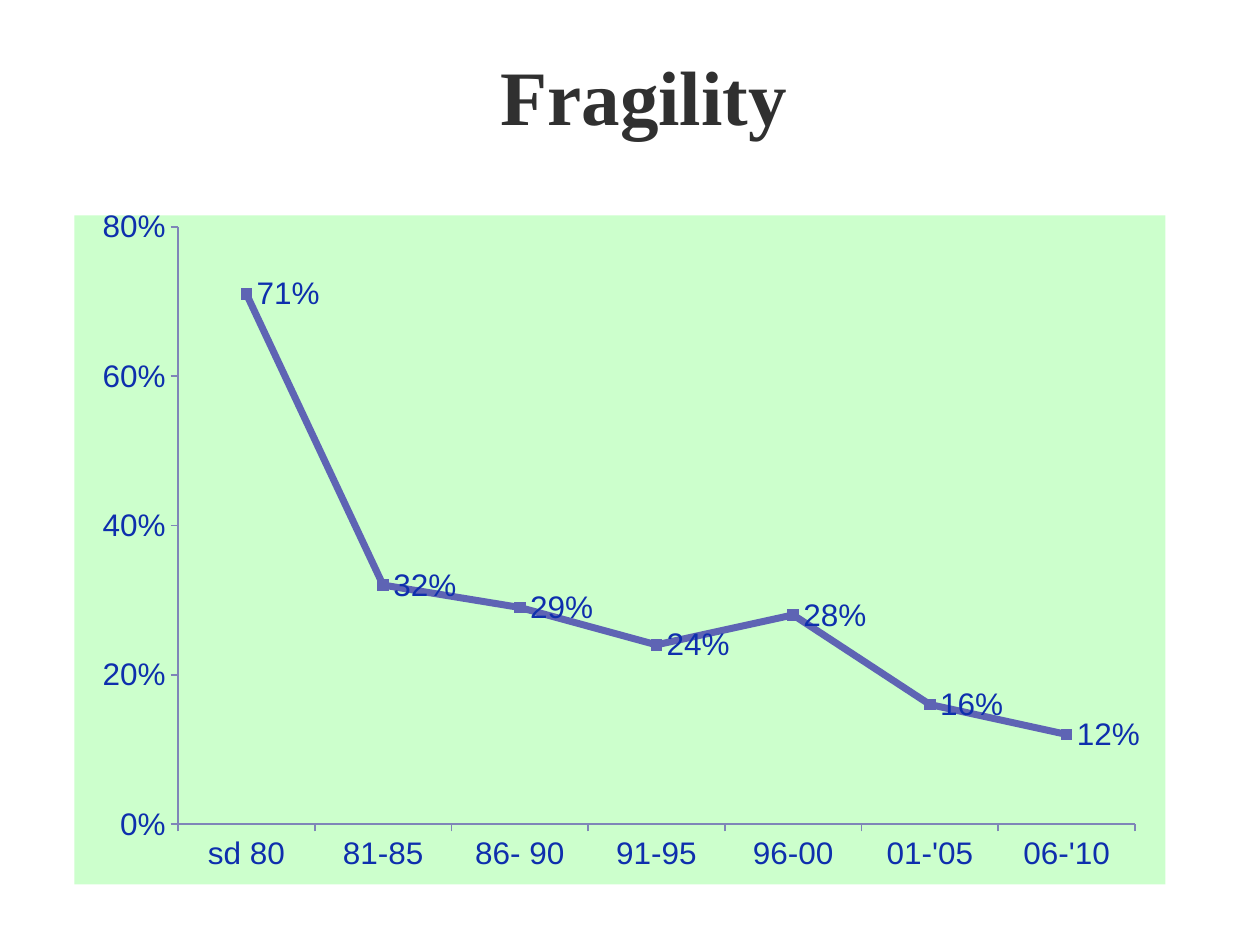
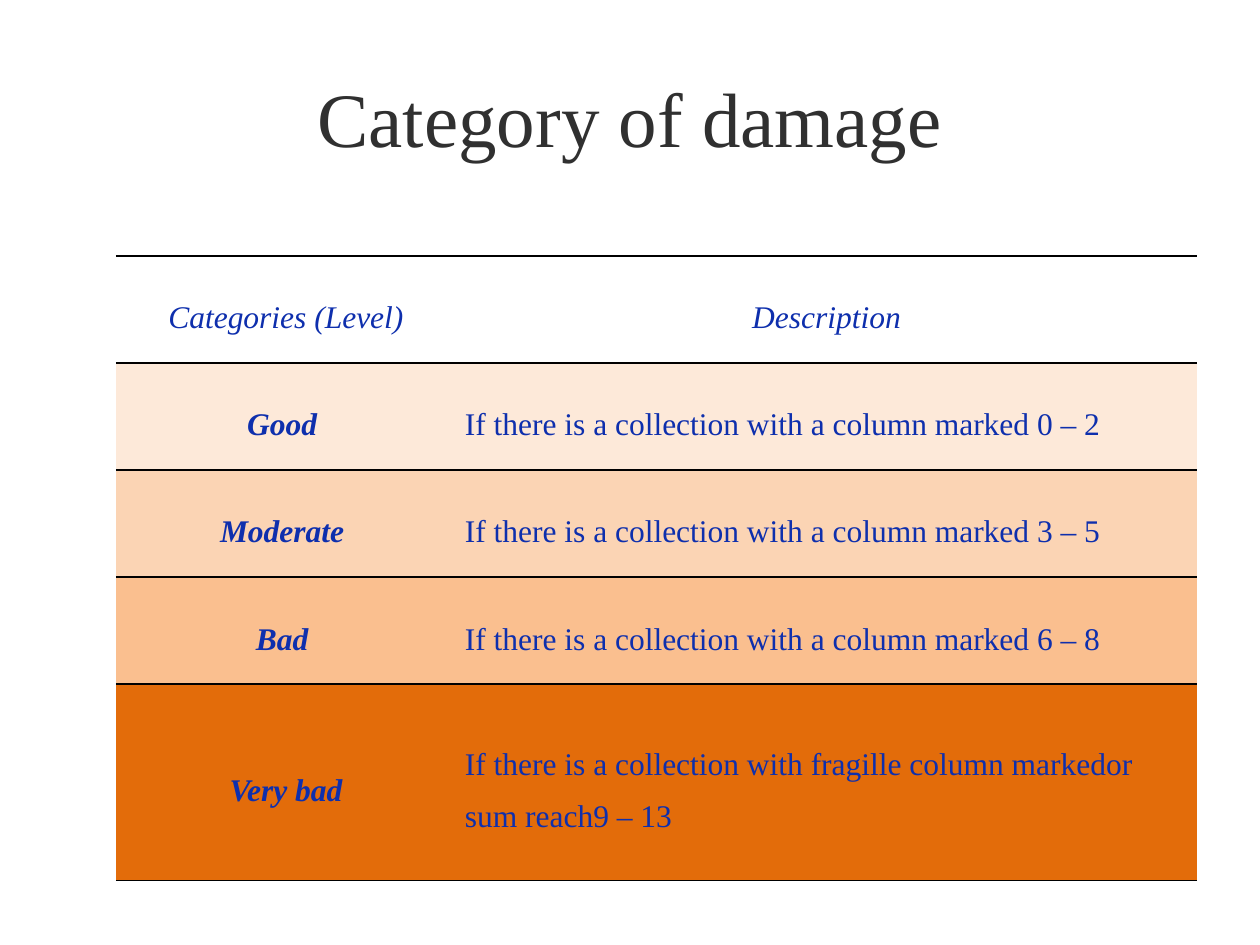
"""Build two slides on collection condition: a fragility chart and a damage category table."""
from dataclasses import dataclass

from lxml import etree
from pptx import Presentation
from pptx.chart.data import CategoryChartData
from pptx.dml.color import RGBColor
from pptx.enum.chart import XL_CHART_TYPE as ChartType
from pptx.enum.chart import XL_LABEL_POSITION as LabelPosition
from pptx.enum.chart import XL_MARKER_STYLE as MarkerStyle
from pptx.enum.chart import XL_TICK_MARK as TickMark
from pptx.enum.text import MSO_ANCHOR as Anchor
from pptx.enum.text import MSO_AUTO_SIZE as AutoSize
from pptx.enum.text import PP_ALIGN as Align
from pptx.oxml import parse_xml
from pptx.oxml.ns import nsdecls, qn
from pptx.util import Inches, Pt


@dataclass(frozen=True)
class Theme:
    heading: str = "303030"
    ink: str = "0E2FAD"
    chart_ground: str = "CCFFCC"
    trend: str = "5E64B4"
    axis: str = "7F85B8"
    rule: str = "000000"
    levels: tuple = ("FFFFFF", "FDE9D9", "FBD4B4", "FABF8F", "E36C0A")
    serif: str = "Times New Roman"
    sans: str = "Arial"
    title_size: int = 44
    body_size: int = 18


def rgb(color):
    return RGBColor.from_string(color)


class Deck:
    def __init__(self, theme):
        self.theme = theme
        self.presentation = Presentation()
        self.presentation.slide_width = Inches(10)
        self.presentation.slide_height = Inches(7.5)
        self.slide = None

    def style(self, font, color, size, name, bold=False, italic=False):
        font.name, font.size = name, Pt(size)
        font.bold, font.italic = bold, italic
        font.color.rgb = rgb(color)

    def start(self, title, box, bold=False):
        self.slide = self.presentation.slides.add_slide(self.presentation.slide_layouts[5])
        heading = self.slide.shapes.title
        heading.left, heading.top, heading.width, heading.height = map(Inches, box)
        frame = heading.text_frame
        frame.text = title
        frame.word_wrap = True
        frame.auto_size = AutoSize.NONE
        frame.vertical_anchor = Anchor.MIDDLE
        paragraph = frame.paragraphs[0]
        paragraph.alignment = Align.CENTER
        self.style(paragraph.font, self.theme.heading, self.theme.title_size,
                   self.theme.serif, bold)

    def line_chart(self, box, shares, plot_box):
        data = CategoryChartData(number_format="0%")
        data.categories = list(shares)
        data.add_series("Series 1", list(shares.values()))
        chart = self.slide.shapes.add_chart(
            ChartType.LINE_MARKERS, *map(Inches, box), data).chart
        chart.has_legend = chart.has_title = False
        self.style(chart.font, self.theme.ink, self.theme.body_size, self.theme.sans)
        self.ground_chart(chart)
        self.place_plot(chart, plot_box)

        for axis in (chart.category_axis, chart.value_axis):
            axis.has_major_gridlines = False
            axis.major_tick_mark = TickMark.OUTSIDE
            axis.format.line.color.rgb = rgb(self.theme.axis)
            axis.format.line.width = Pt(1)
        scale = chart.value_axis
        scale.minimum_scale, scale.maximum_scale, scale.major_unit = 0, 0.8, 0.2
        scale.tick_labels.number_format = "0%"
        scale.tick_labels.number_format_is_linked = False

        plot = chart.plots[0]
        plot.vary_by_categories = False
        trend = plot.series[0]
        trend.smooth = False
        trend.format.line.color.rgb = rgb(self.theme.trend)
        trend.format.line.width = Pt(4)
        trend.marker.style, trend.marker.size = MarkerStyle.SQUARE, 6
        trend.marker.format.fill.solid()
        trend.marker.format.fill.fore_color.rgb = rgb(self.theme.trend)
        trend.marker.format.line.color.rgb = rgb(self.theme.trend)
        labels = trend.data_labels
        labels.show_value = True
        labels.number_format, labels.number_format_is_linked = "0%", False
        labels.position = LabelPosition.RIGHT

    def ground_chart(self, chart):
        ground = parse_xml(
            f'<c:spPr {nsdecls("c", "a")}><a:solidFill><a:srgbClr val="{self.theme.chart_ground}"/>'
            '</a:solidFill><a:ln><a:noFill/></a:ln></c:spPr>')
        chart.element.find(qn("c:txPr")).addprevious(ground)

    def place_plot(self, chart, plot_box):
        area = chart.element.find(".//" + qn("c:plotArea"))
        for automatic in area.findall(qn("c:layout")):
            area.remove(automatic)
        layout = etree.Element(qn("c:layout"))
        manual = etree.SubElement(layout, qn("c:manualLayout"))
        settings = [("layoutTarget", "inner"), ("xMode", "edge"), ("yMode", "edge")]
        for tag, value in settings + list(zip("xywh", plot_box)):
            etree.SubElement(manual, qn("c:" + tag)).set("val", str(value))
        area.insert(0, layout)

    def table(self, box, widths, heights, rows):
        grid = self.slide.shapes.add_table(
            len(rows), len(widths), *map(Inches, box)).table
        grid.first_row = grid.horz_banding = False
        for column, width in zip(grid.columns, widths):
            column.width = Inches(width)
        for row, height in zip(grid.rows, heights):
            row.height = Inches(height)
        for r, (texts, fill) in enumerate(zip(rows, self.theme.levels)):
            for c, text in enumerate(texts):
                is_header, is_level = r == 0, c == 0
                self.fill_cell(grid.cell(r, c), text, fill,
                               Align.CENTER if is_header or is_level else Align.JUSTIFY,
                               bold=is_level and not is_header,
                               italic=is_level or is_header)

    def fill_cell(self, cell, text, fill, alignment, bold, italic):
        self.rule_cell(cell)
        cell.fill.solid()
        cell.fill.fore_color.rgb = rgb(fill)
        cell.vertical_anchor = Anchor.MIDDLE
        cell.margin_left = cell.margin_right = Inches(0.07)
        cell.margin_top = cell.margin_bottom = 0
        cell.text_frame.text = text
        for paragraph in cell.text_frame.paragraphs:
            properties = paragraph._p.get_or_add_pPr()
            properties.set("marL", str(Inches(0.3)))
            properties.set("indent", str(Inches(-0.25)))
            paragraph.alignment = alignment
            paragraph.line_spacing = 1.5
            self.style(paragraph.font, self.theme.ink, self.theme.body_size,
                       self.theme.serif, bold, italic)

    def rule_cell(self, cell):
        properties = cell._tc.get_or_add_tcPr()
        for side in "LRTB":
            edge = etree.SubElement(properties, qn("a:ln" + side))
            if side in "LR":
                etree.SubElement(edge, qn("a:noFill"))
            else:
                edge.set("w", str(Pt(1)))
                paint = etree.SubElement(edge, qn("a:solidFill"))
                etree.SubElement(paint, qn("a:srgbClr")).set("val", self.theme.rule)


def main():
    deck = Deck(Theme())

    deck.start("Fragility", (0.72, 0.33, 8.78, 0.84), bold=True)
    fragile_shares = {
        "sd 80": 0.71, "81-85": 0.32, "86- 90": 0.29, "91-95": 0.24,
        "96-00": 0.28, "01-'05": 0.16, "06-'10": 0.12,
    }
    deck.line_chart((0.59, 1.66, 8.66, 5.36), fragile_shares, (0.095, 0.017, 0.877, 0.893))

    deck.start("Category of damage", (0.5, 0.3, 9, 1.25))
    marked = "If there is a collection with a column marked "
    damage_levels = [
        ("Categories (Level)", "Description"),
        ("Good ", marked + "0 – 2"),
        ("Moderate ", marked + "3 – 5"),
        ("Bad ", marked + "6 – 8"),
        ("Very bad", "If there is a collection with fragille column markedor \nsum reach9 – 13"),
    ]
    deck.table((0.92, 2.03, 8.58, 4.96), (2.65, 5.93), [0.85] * 4 + [1.56], damage_levels)

    deck.presentation.save("out.pptx")


if __name__ == "__main__":
    main()
